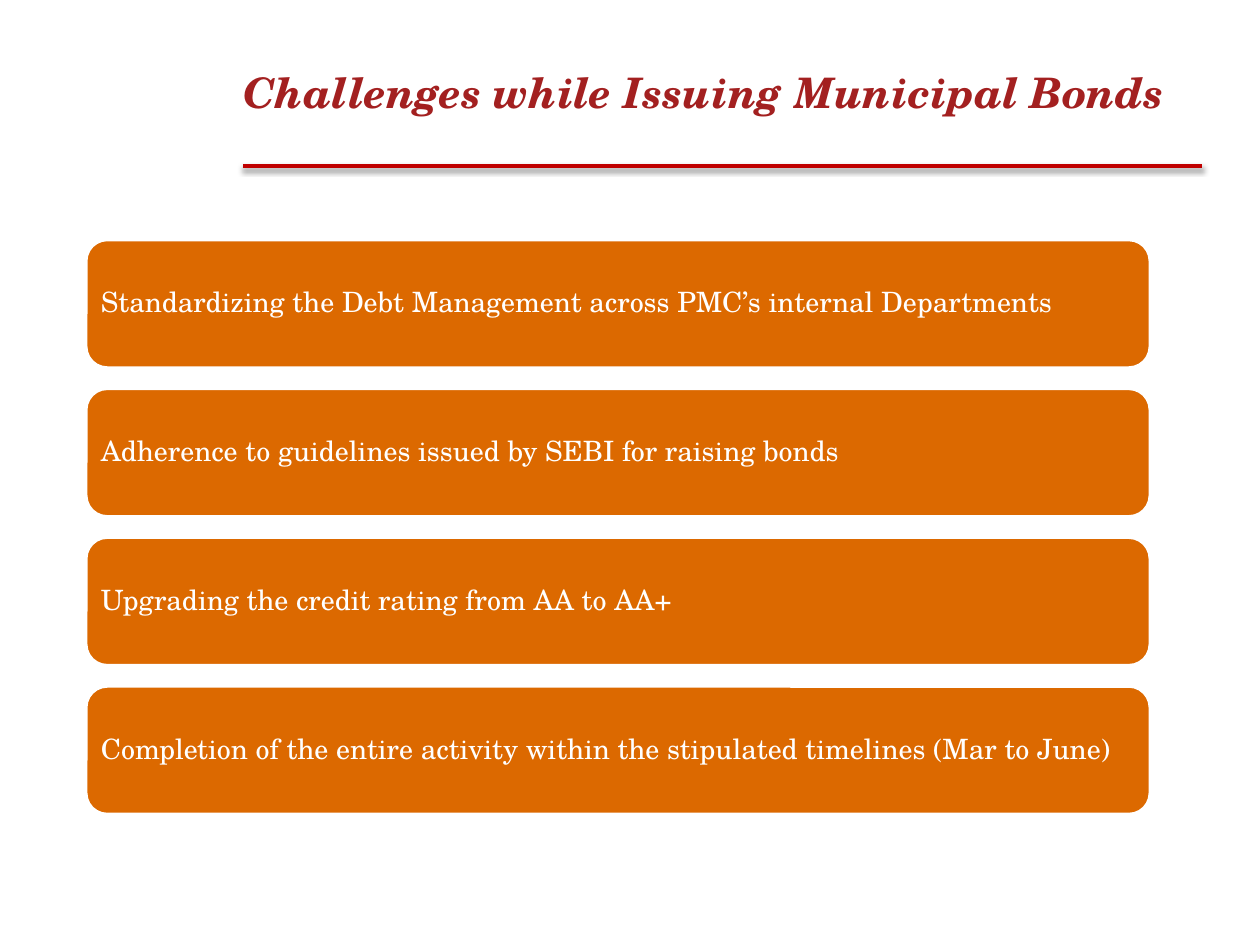
from lxml import etree
from pptx import Presentation
from pptx.dml.color import RGBColor
from pptx.enum.shapes import MSO_CONNECTOR as Link, MSO_SHAPE as Shape
from pptx.enum.text import MSO_ANCHOR as Anchor, MSO_AUTO_SIZE as Fit, PP_ALIGN as Align
from pptx.oxml import parse_xml
from pptx.oxml.ns import nsdecls
from pptx.util import Cm, Pt

FACE = "TeX Gyre Schola"
WHITE = RGBColor(0xFF, 0xFF, 0xFF)
ORANGE = RGBColor(0xDC, 0x69, 0x00)
RED = RGBColor(0xC0, 0x00, 0x00)
BRICK = RGBColor(0xA3, 0x20, 0x20)


def set_text(frame, text, size, color, inset):
    frame.text = text
    frame.word_wrap = True
    frame.auto_size = Fit.NONE
    frame.vertical_anchor = Anchor.MIDDLE
    frame.margin_left = frame.margin_right = Cm(inset)
    frame.margin_top = frame.margin_bottom = Cm(inset)
    para = frame.paragraphs[0]
    para.alignment = Align.LEFT
    font = para.runs[0].font
    font.name = FACE
    font.size = Pt(size)
    font.color.rgb = color
    return para


deck = Presentation()
deck.slide_width, deck.slide_height = Cm(25.4), Cm(19.05)
slide = deck.slides.add_slide(deck.slide_layouts[5])

title = slide.shapes.title
title.left, title.top = Cm(4.9), Cm(0.61)
title.width, title.height = Cm(20.09), Cm(2.46)
head = set_text(title.text_frame, "Challenges while Issuing Municipal Bonds", 24, BRICK, 0)
head.runs[0].font.bold = True
head.runs[0].font.italic = True

rule = slide.shapes.add_connector(Link.STRAIGHT, Cm(4.9), Cm(3.35), Cm(24.23), Cm(3.35))
rule.line.color.rgb = RED
rule.line.width = Pt(2.25)
props = rule.line._get_or_add_ln().getparent()
glow = parse_xml(f"<a:effectLst {nsdecls('a')}/>")
shade = etree.SubElement(
    glow, glow.tag.replace("effectLst", "outerShdw"),
    blurRad=str(Pt(3.1)), dist=str(Pt(1.8)), dir="5400000", rotWithShape="0")
black = etree.SubElement(shade, glow.tag.replace("effectLst", "srgbClr"), val="000000")
etree.SubElement(black, glow.tag.replace("effectLst", "alpha"), val="35000")
props.append(glow)

items = [
    "Standardizing the Debt Management across PMC’s internal Departments",
    "Adherence to guidelines issued by SEBI for raising bonds",
    "Upgrading the credit rating from AA to AA+",
    "Completion of the entire activity within the stipulated timelines (Mar to June)",
]
for row, item in enumerate(items):
    bar = slide.shapes.add_shape(
        Shape.ROUNDED_RECTANGLE, Cm(1.73), Cm(4.83 + 3 * row), Cm(21.46), Cm(2.59))
    bar.shadow.inherit = False
    bar.fill.solid()
    bar.fill.fore_color.rgb = ORANGE
    bar.line.color.rgb = WHITE
    bar.line.width = Pt(2)
    para = set_text(bar.text_frame, item, 16, WHITE, 0.18)
    para.line_spacing = 0.9

deck.save("out.pptx")
